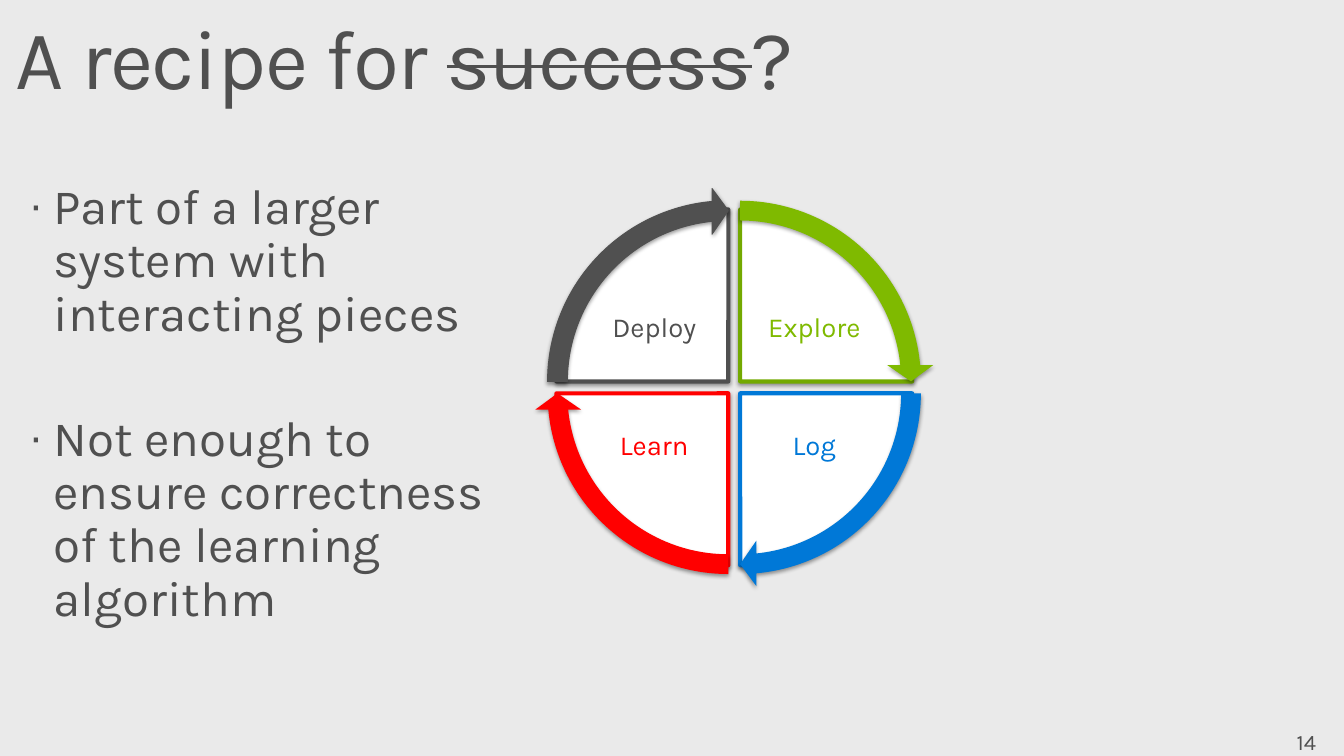
from lxml.etree import SubElement
from pptx import Presentation
from pptx.dml.color import RGBColor
from pptx.enum.shapes import MSO_SHAPE
from pptx.enum.text import MSO_ANCHOR, MSO_AUTO_SIZE, PP_ALIGN
from pptx.oxml.ns import qn
from pptx.util import Inches, Pt

COLORS = {
    "background": "EAEAEA", "text": "505050", "white": "FFFFFF", "shadow": "000000",
    "green": "7FBA00", "dark green": "73A900", "blue": "0078D7", "red": "FF0000",
}
FONT = "Karla"

TITLE = [("A recipe for ", False), ("success", True), ("?", False)]  # text, struck out
POINTS = [
    "Part of a larger system with interacting pieces",
    "Not enough to ensure correctness of the learning algorithm",
]
PAGE = "14"
# label, column side, row side, start angle, colour, pie outline
STAGES = [
    ("Explore", 1, -1, 162, "green", "dark green"),
    ("Log", 1, 1, 0, "blue", "blue"),
    ("Learn", -1, 1, 54, "red", "red"),
    ("Deploy", -1, -1, 108, "text", "text"),
]

CYCLE_X, CYCLE_Y = 7.43, 3.92
HALF_GAP = 0.06
PIE_SIZE, ARROW_SIZE = 3.48, 3.92
LABEL_WIDTH, LABEL_HEIGHT = 1.29, 0.95
LABEL_DX, LABEL_DY = 0.81, 0.6
QUARTER, FULL_TURN = 54, 216  # angles in adjustment units
ARROW_SWEEP = 50.725


def rgb(name):
    return RGBColor.from_string(COLORS[name])


def centred_box(x, y, width, height):
    return [Inches(v) for v in (x - width / 2, y - height / 2, width, height)]


def prepare_frame(frame, margin_x, margin_y, anchor=MSO_ANCHOR.TOP, wrap=True):
    frame.auto_size = MSO_AUTO_SIZE.NONE
    frame.word_wrap = wrap
    frame.vertical_anchor = anchor
    frame.margin_left = frame.margin_right = Inches(margin_x)
    frame.margin_top = frame.margin_bottom = Inches(margin_y)


def write_run(paragraph, text, size, color="text"):
    paragraph.line_spacing = 0.9
    run = paragraph.add_run()
    run.text = text
    run.font.name = FONT
    run.font.size = Pt(size)
    run.font.color.rgb = rgb(color)
    return run


def add_bullet(paragraph):
    properties = paragraph._p.get_or_add_pPr()
    properties.set("marL", str(Inches(0.25)))
    properties.set("indent", str(-Inches(0.25)))
    SubElement(properties, qn("a:buSzPct"), val="90000")
    SubElement(properties, qn("a:buChar"), char="·")


def add_shadow(shape):
    shape.shadow.inherit = False
    effects = shape._element.spPr.find(qn("a:effectLst"))
    shadow = SubElement(effects, qn("a:outerShdw"), blurRad=str(Pt(3.1)),
                        dist=str(Pt(1.6)), dir="5400000", rotWithShape="0")
    color = SubElement(shadow, qn("a:srgbClr"), val=COLORS["shadow"])
    SubElement(color, qn("a:alpha"), val="38000")


def add_cycle_shape(slide, preset, col, row, size, angles, fill):
    box = centred_box(CYCLE_X + col * HALF_GAP, CYCLE_Y + row * HALF_GAP, size, size)
    shape = slide.shapes.add_shape(preset, *box)
    for index, value in enumerate(angles):
        shape.adjustments[index] = value
    shape.fill.solid()
    shape.fill.fore_color.rgb = rgb(fill)
    shape.line.fill.background()
    add_shadow(shape)
    return shape


def outline(shape, color, width):
    shape.line.color.rgb = rgb(color)
    shape.line.width = Pt(width)


def place(shape, left, top, width, height):
    shape.left, shape.top = Inches(left), Inches(top)
    shape.width, shape.height = Inches(width), Inches(height)


def add_title(slide):
    title = slide.shapes.title
    place(title, 0, 0.07, 13, 1)
    prepare_frame(title.text_frame, 0.16, 0.1)
    paragraph = title.text_frame.paragraphs[0]
    paragraph.alignment = PP_ALIGN.LEFT
    for text, struck in TITLE:
        properties = write_run(paragraph, text, 61.2)._r.get_or_add_rPr()
        properties.set("spc", "-100")
        if struck:
            properties.set("strike", "sngStrike")


def add_points(slide):
    body = slide.placeholders[1]
    place(body, 0.13, 1.74, 5.33, 4.26)
    frame = body.text_frame
    prepare_frame(frame, 0.16, 0.1)
    for index, point in enumerate(POINTS):
        paragraph = frame.add_paragraph() if index else frame.paragraphs[0]
        add_bullet(paragraph)
        paragraph.space_before = Pt(52 if index else 0)
        write_run(paragraph, point, 36)


def add_cycle(slide):
    for label, col, row, start, color, edge in STAGES:
        pie = add_cycle_shape(slide, MSO_SHAPE.PIE, col, row, PIE_SIZE,
                              (start, (start + QUARTER) % FULL_TURN), "white")
        outline(pie, edge, 3)
        caption = slide.shapes.add_textbox(*centred_box(
            CYCLE_X + col * LABEL_DX, CYCLE_Y + row * LABEL_DY,
            LABEL_WIDTH, LABEL_HEIGHT))
        prepare_frame(caption.text_frame, 0, 0, MSO_ANCHOR.MIDDLE)
        paragraph = caption.text_frame.paragraphs[0]
        paragraph.alignment = PP_ALIGN.CENTER
        write_run(paragraph, label, 20, color)

    for label, col, row, start, color, edge in STAGES:
        arrow = add_cycle_shape(slide, MSO_SHAPE.CIRCULAR_ARROW, col, row, ARROW_SIZE,
                                (0.051, 3.275, start + ARROW_SWEEP, start, 0.059), color)
        if label == "Deploy":
            outline(arrow, edge, 0.75)


def add_page_number(slide):
    number = slide.shapes.add_textbox(Inches(12.92), Inches(7.24), Inches(0.68), Inches(0.57))
    prepare_frame(number.text_frame, 0.2, 0.16, wrap=False)
    write_run(number.text_frame.paragraphs[0], PAGE, 16)


def main():
    deck = Presentation()
    deck.slide_width, deck.slide_height = Inches(13.6), Inches(7.65)
    slide = deck.slides.add_slide(deck.slide_layouts[1])
    slide.background.fill.solid()
    slide.background.fill.fore_color.rgb = rgb("background")
    add_title(slide)
    add_points(slide)
    add_cycle(slide)
    add_page_number(slide)
    deck.save("out.pptx")


if __name__ == "__main__":
    main()
